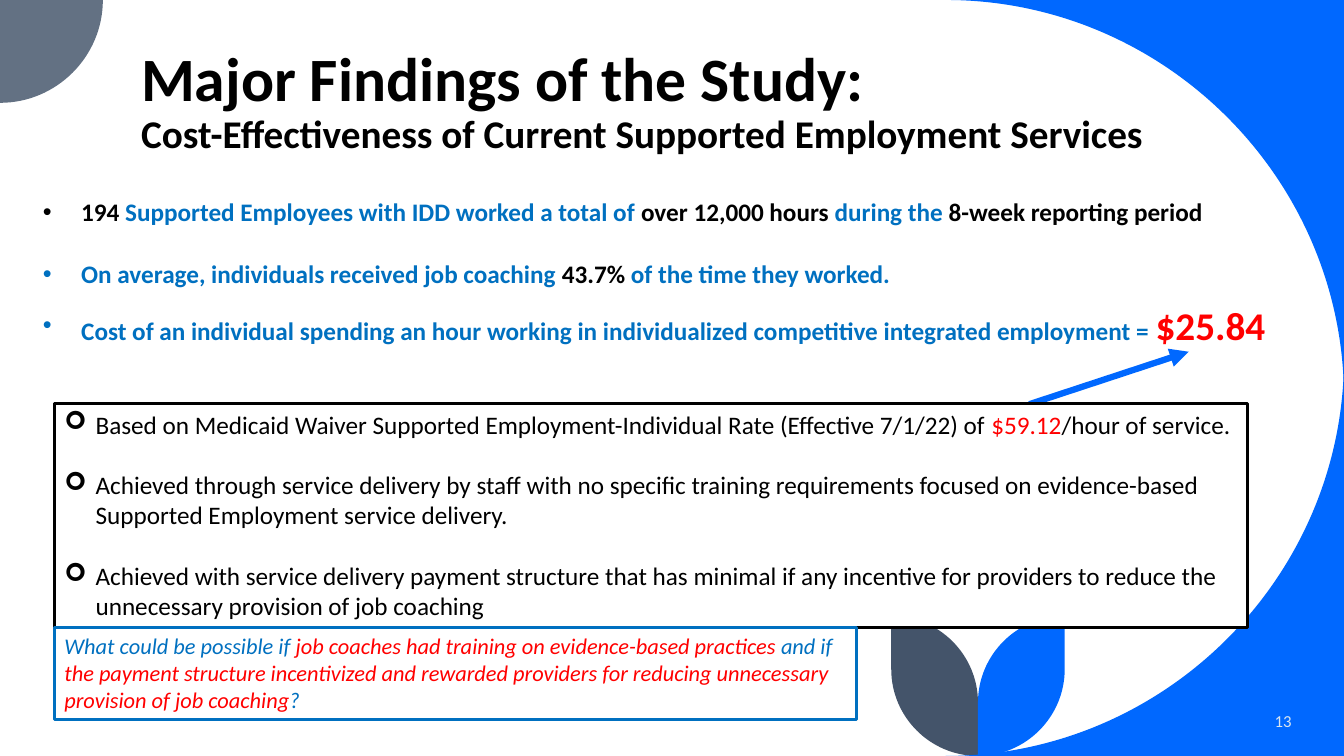
import math

import lxml.etree
import pptx
import pptx.dml.color
import pptx.enum.shapes
import pptx.enum.text
import pptx.oxml.ns
import pptx.util

THEME = {
    "font": "Calibri", "bullet font": "Wingdings",
    "black": "000000", "white": "FFFFFF", "red": "FF0000", "text blue": "0070C0",
    "bright blue": "0068FF", "slate": "637183", "navy": "44546A", "pale": "DAE5EF",
    "title": 44, "large": 28, "text": 18, "question": 16, "number": 12,
}

deck = pptx.Presentation()
deck.slide_width = pptx.util.Inches(13.33)
deck.slide_height = pptx.util.Inches(7.5)
COLUMN = deck.slide_width / 100
ROW = deck.slide_height / 100
page = deck.slides.add_slide(deck.slide_layouts[1])

FRAMES = {
    name: [round(share * unit) for share, unit in zip(shares, (COLUMN, ROW, COLUMN, ROW))]
    for name, shares in {
        "title": (9.75, 4.8, 83.05, 16.67),
        "findings": (2.44, 24.7, 96.32, 53.73),
        "number": (83.27, 92.67, 13.58, 5.33),
        "basis": (4.05, 53.43, 88.75, 29.6),
        "question": (4.05, 83, 59.71, 12.13),
    }.items()
}


def color(name):
    return pptx.dml.color.RGBColor.from_string(THEME[name])


def write(para, spans, bold=False, italic=False, bullet=None, bullet_font=None, indent=0):
    """Add (text, colour, size) spans, with an optional hanging bullet."""
    para.space_before = pptx.util.Pt(0)
    for text, ink, size in spans:
        span = para.add_run()
        span.text = text
        span.font.name = THEME["font"]
        span.font.size = pptx.util.Pt(THEME[size])
        span.font.color.rgb = color(ink)
        span.font.bold = bold
        span.font.italic = italic
    if bullet:
        properties = para._p.get_or_add_pPr()
        properties.set("marL", str(pptx.util.Inches(indent)))
        properties.set("indent", str(-pptx.util.Inches(indent)))
        if bullet_font:
            face = lxml.etree.SubElement(properties, pptx.oxml.ns.qn("a:buFont"))
            face.set("typeface", THEME[bullet_font])
        mark = lxml.etree.SubElement(properties, pptx.oxml.ns.qn("a:buChar"))
        mark.set("char", bullet)


# Background shapes: each quarter arc is centre x, centre y, radius (in rows), first and last
# angle. A zero radius gives a corner point.
right = deck.slide_width / ROW
sweep, corner, leaf, leaf_height, stem = 52.67, 13.6, 11.47, 18.53, 129.33
cap = 100 - leaf_height + leaf
backdrop = [
    ("bright blue", [(right, 0, 0, 0, 0), (right - sweep, sweep, sweep, -90, 0)]),
    ("bright blue", [(right, 100, 0, 0, 0), (right - sweep, 100 - sweep, sweep, 0, 90)]),
    ("slate", [(0, 0, 0, 0, 0), (0, 0, corner, 0, 90)]),
    ("bright blue", [(stem + leaf, cap, leaf, 180, 270), (stem, 100 - leaf, leaf, 0, 90)]),
    ("navy", [(stem - leaf, cap, leaf, 0, -90), (stem, 100 - leaf, leaf, 180, 90)]),
]
HANDLE = 0.55  # length of a curve handle as a share of the radius
for ink, arcs in backdrop:
    points, curve_starts = [], []
    for center_x, center_y, radius, first, last in arcs:
        if radius:
            curve_starts.append(len(points))
        start, end = (
            (math.cos(math.radians(angle)), math.sin(math.radians(angle)))
            for angle in (first, last))
        # In a quarter arc each handle points along the radius of the other end.
        for along, across in ((1, 0), (1, HANDLE), (HANDLE, 1), (0, 1))[:4 if radius else 1]:
            points.append(tuple(
                round(ROW * (center + radius * (along * begin + across * finish)))
                for center, begin, finish in zip((center_x, center_y), start, end)))
    builder = page.shapes.build_freeform(*points[0], scale=1.0)
    builder.add_line_segments(points[1:], close=True)
    shape = builder.convert_to_shape()
    lines = list(shape.element.iter(pptx.oxml.ns.qn("a:lnTo")))
    for curve_start in curve_starts:
        handles = lines[curve_start:curve_start + 3]
        curve = lxml.etree.Element(pptx.oxml.ns.qn("a:cubicBezTo"))
        handles[0].addprevious(curve)
        for line in handles:
            curve.append(line[0])
            line.getparent().remove(line)
    shape.shadow.inherit = False
    shape.fill.solid()
    shape.fill.fore_color.rgb = color(ink)
    shape.line.fill.background()
    shape.element.getparent().insert(2, shape.element)

# Title
title = page.shapes.title
title.left, title.top, title.width, title.height = FRAMES["title"]
title.text_frame.auto_size = pptx.enum.text.MSO_AUTO_SIZE.NONE
title.text_frame.vertical_anchor = pptx.enum.text.MSO_ANCHOR.BOTTOM
para = title.text_frame.paragraphs[0]
para.alignment = pptx.enum.text.PP_ALIGN.LEFT
para.line_spacing = 0.9
write(para, [("Major Findings of the Study:", "black", "title")], bold=True)
para.add_line_break()
write(para, [("Cost-Effectiveness of Current Supported Employment Services", "black", "large")],
      bold=True)

# Findings: space after, spans
findings = [
    (19.5, [("194", "black", "text"),
            (" Supported Employees with IDD worked a total of ", "text blue", "text"),
            ("over 12,000 hours ", "black", "text"),
            ("during the ", "text blue", "text"),
            ("8-week reporting period", "black", "text")]),
    (4, [("On average, individuals received job coaching ", "text blue", "text"),
         ("43.7%", "black", "text"),
         (" of the time they worked.", "text blue", "text")]),
    (8, [("Cost of an individual spending an hour working in individualized competitive "
          "integrated employment = ", "text blue", "text"),
         ("$25.84", "red", "large")]),
]
body = page.placeholders[1]
body.left, body.top, body.width, body.height = FRAMES["findings"]
body.text_frame.auto_size = pptx.enum.text.MSO_AUTO_SIZE.NONE
for index, (gap, spans) in enumerate(findings):
    para = body.text_frame.add_paragraph() if index else body.text_frame.paragraphs[0]
    para.line_spacing = 1.15
    para.space_after = pptx.util.Pt(gap)
    write(para, spans, bold=True, bullet="•", indent=0.38)

# Slide number
number = page.shapes.add_textbox(*FRAMES["number"])
number.text_frame.word_wrap = True
number.text_frame.vertical_anchor = pptx.enum.text.MSO_ANCHOR.MIDDLE
para = number.text_frame.paragraphs[0]
para.alignment = pptx.enum.text.PP_ALIGN.RIGHT
write(para, [("13", "pale", "number")])

# Arrow from the basis box up to the cost
arrow = page.shapes.add_connector(
    pptx.enum.shapes.MSO_CONNECTOR.STRAIGHT,
    round(76.59 * COLUMN), round(53.47 * ROW), round(88.45 * COLUMN), round(46.53 * ROW))
arrow.line.color.rgb = color("bright blue")
arrow.line.width = pptx.util.Pt(4.5)
head = lxml.etree.SubElement(arrow.line._get_or_add_ln(), pptx.oxml.ns.qn("a:tailEnd"))
head.set("type", "triangle")
lxml.etree.SubElement(arrow._element.spPr, pptx.oxml.ns.qn("a:effectLst"))

# Framed boxes
basis = [
    [("Based on Medicaid Waiver Supported Employment-Individual Rate (Effective 7/1/22) of ",
      "black", "text"),
     ("$59.12", "red", "text"),
     ("/hour of service.", "black", "text")],
    [("Achieved through service delivery by staff with no specific training requirements "
      "focused on evidence-based Supported Employment service delivery.", "black", "text")],
    [("Achieved with service delivery payment structure that has minimal if any incentive for "
      "providers to reduce the unnecessary provision of job coaching", "black", "text")],
]
question = [
    [("What could be possible if ", "text blue", "question"),
     ("job coaches had training on evidence-based practices ", "red", "question"),
     ("and if ", "text blue", "question"),
     ("the payment structure incentivized and rewarded providers for reducing unnecessary "
      "provision of job coaching", "red", "question"),
     ("?", "text blue", "question")],
]
for name, paragraphs, outline, fill, style in (
    ("basis", basis, "black", "white",
     {"bullet": "➢", "bullet_font": "bullet font", "indent": 0.31}),
    ("question", question, "text blue", None, {"italic": True}),
):
    box = page.shapes.add_shape(pptx.enum.shapes.MSO_SHAPE.RECTANGLE, *FRAMES[name])
    box.shadow.inherit = False
    if fill:
        box.fill.solid()
        box.fill.fore_color.rgb = color(fill)
    else:
        box.fill.background()
    box.line.color.rgb = color(outline)
    box.line.width = pptx.util.Pt(2.25)
    frame = box.text_frame
    frame.word_wrap = True
    frame.auto_size = pptx.enum.text.MSO_AUTO_SIZE.SHAPE_TO_FIT_TEXT
    frame.vertical_anchor = pptx.enum.text.MSO_ANCHOR.TOP
    for index, spans in enumerate(paragraphs):
        para = frame.add_paragraph() if index else frame.paragraphs[0]
        para.alignment = pptx.enum.text.PP_ALIGN.LEFT
        if index < len(paragraphs) - 1:
            para.space_after = pptx.util.Pt(21.7)
        write(para, spans, **style)

deck.save("out.pptx")
